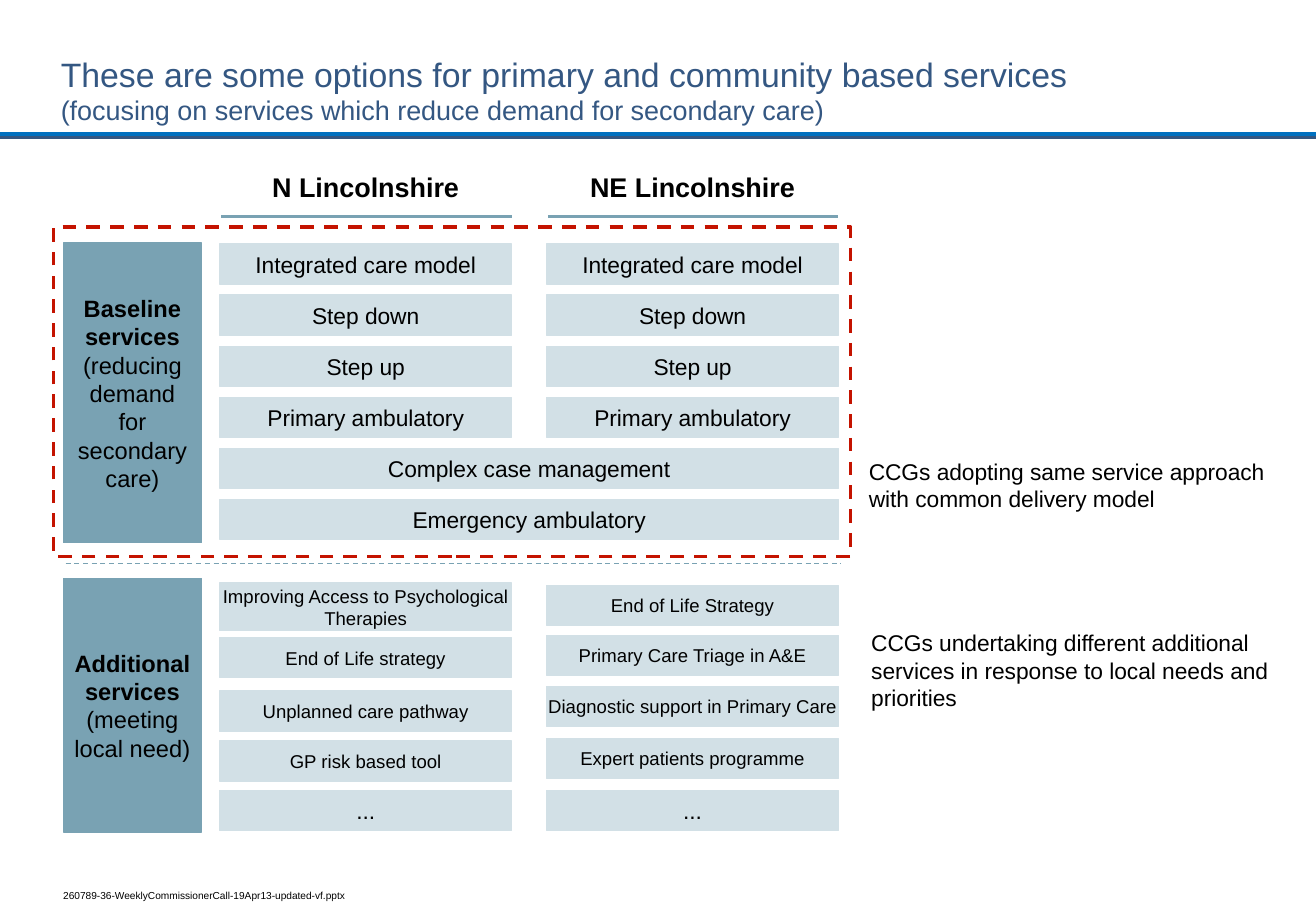
from lxml import etree
from pptx import Presentation
from pptx.dml.color import RGBColor
from pptx.enum import dml, shapes, text
from pptx.oxml import ns
from pptx.util import Inches, Pt

NAVY = RGBColor(0x34, 0x57, 0x82)
BLUE = RGBColor(0x00, 0x70, 0xC0)
TEAL = RGBColor(0x79, 0xA2, 0xB3)
PALE = RGBColor(0xD2, 0xE0, 0xE6)
RED = RGBColor(0xC4, 0x13, 0x00)
BLACK = RGBColor(0x00, 0x00, 0x00)

CENTER = text.PP_ALIGN.CENTER
LEFT = text.PP_ALIGN.LEFT
TOP = text.MSO_ANCHOR.TOP
MIDDLE = text.MSO_ANCHOR.MIDDLE
BOTTOM = text.MSO_ANCHOR.BOTTOM

SLIDE_WIDTH, SLIDE_HEIGHT = 10.83, 7.5
BAR_HEIGHT = 0.33
COLUMN_WIDTH = 2.4
COLUMN_OFFSETS = (0, 2.69)
REGIONS = ("N Lincolnshire", "NE Lincolnshire")

BASELINE_PITCH = 0.42
SEPARATE_SERVICES = ("Integrated care model", "Step down", "Step up", "Primary ambulatory")
SHARED_SERVICES = ("Complex case management", "Emergency ambulatory")

# Each service: label, offset from the top of the block, bar height, text size
ADDITIONAL_SERVICES = (
    (("Improving Access to Psychological Therapies", 0.04, 0.39, 11),
     ("End of Life strategy", 0.49, BAR_HEIGHT, 11),
     ("Unplanned care pathway", 0.93, BAR_HEIGHT, 11),
     ("GP risk based tool", 1.34, BAR_HEIGHT, 11),
     ("...", 1.75, BAR_HEIGHT, 13.5)),
    (("End of Life Strategy", 0.06, BAR_HEIGHT, 11),
     ("Primary Care Triage in A&E", 0.47, BAR_HEIGHT, 11),
     ("Diagnostic support in Primary Care", 0.89, BAR_HEIGHT, 11),
     ("Expert patients programme", 1.32, BAR_HEIGHT, 11),
     ("...", 1.75, BAR_HEIGHT, 13.5)),
)


def write(shape, paragraphs, align=LEFT, anchor=TOP, margins=(0, 0.05), wrap=True):
    """Each paragraph is a list of (words, size, bold, colour) runs, one run a line."""
    frame = shape.text_frame
    side, end = (Inches(margin) for margin in margins)
    settings = {"word_wrap": wrap, "vertical_anchor": anchor,
                "margin_left": side, "margin_right": side,
                "margin_top": end, "margin_bottom": end}
    for name, value in settings.items():
        setattr(frame, name, value)
    for index, runs in enumerate(paragraphs):
        paragraph = frame.add_paragraph() if index else frame.paragraphs[0]
        paragraph.alignment = align
        for position, (words, size, bold, colour) in enumerate(runs):
            if position:
                paragraph.add_line_break()
            run = paragraph.add_run()
            run.text = words
            for name, value in {"name": "Arial", "size": Pt(size), "bold": bold}.items():
                setattr(run.font, name, value)
            run.font.color.rgb = colour


def add_text(slide, box, paragraphs, **layout):
    shape = slide.shapes.add_textbox(*map(Inches, box))
    write(shape, paragraphs, **layout)


def add_box(slide, box, fill, line, width=0.75):
    shape = slide.shapes.add_shape(shapes.MSO_SHAPE.RECTANGLE, *map(Inches, box))
    shape.shadow.inherit = False
    if fill is None:
        shape.fill.background()
    else:
        shape.fill.solid()
        shape.fill.fore_color.rgb = fill
    shape.line.color.rgb = line
    shape.line.width = Pt(width)
    return shape


def add_rule(slide, left, right, y, colour, width, dash=None):
    rule = slide.shapes.add_connector(
        shapes.MSO_CONNECTOR.STRAIGHT, Inches(left), Inches(y), Inches(right), Inches(y))
    rule.line.color.rgb = colour
    rule.line.width = Pt(width)
    rule.line.dash_style = dash
    etree.SubElement(rule._element.spPr, ns.qn("a:effectLst"))


def add_bar(slide, box, label, size=13.5):
    bar = add_box(slide, box, PALE, PALE)
    write(bar, [[(label, size, False, BLACK)]], CENTER, MIDDLE, (0, 0))


def add_side_label(slide, box, heading, detail):
    label = add_box(slide, box, TEAL, TEAL)
    write(label, [[(heading, 14, True, BLACK)], [(detail, 14, False, BLACK)]],
          CENTER, MIDDLE, (0.08, 0.1))


def add_title(slide, box):
    left, top, width, height = box
    add_rule(slide, 0, SLIDE_WIDTH, top + height + 0.04, NAVY, 2.25)
    add_rule(slide, 0, SLIDE_WIDTH, top + height + 0.01, BLUE, 2.25)
    add_text(slide, box, [[
        ("These are some options for primary and community based services", 20, False, NAVY),
        ("(focusing on services which reduce demand for secondary care)", 16, False, NAVY),
    ]], anchor=BOTTOM)


def add_column_headers(slide, box):
    left, top, width, height = box
    for offset, region in zip(COLUMN_OFFSETS, REGIONS):
        x = left + offset
        add_text(slide, (x, top, COLUMN_WIDTH, height), [[(region, 16, True, BLACK)]],
                 align=CENTER, anchor=BOTTOM, margins=(0.1, 0.1))
        add_rule(slide, x + 0.01, x + COLUMN_WIDTH, top + height + 0.01, TEAL, 2)


def add_baseline(slide, box):
    left, top, width, height = box
    add_side_label(slide, (left + 0.08, top + 0.13, 1.14, 2.47),
                   "Baseline services", "(reducing demand for secondary care)")
    bars_left, bars_top = left + 1.37, top + 0.14
    for row, label in enumerate(SEPARATE_SERVICES + SHARED_SERVICES):
        y = bars_top + row * BASELINE_PITCH
        if label in SHARED_SERVICES:
            full_width = COLUMN_OFFSETS[-1] + COLUMN_WIDTH
            add_bar(slide, (bars_left, y, full_width, BAR_HEIGHT), label)
        else:
            for offset in COLUMN_OFFSETS:
                add_bar(slide, (bars_left + offset, y, COLUMN_WIDTH, BAR_HEIGHT), label)
    # Dashed frame around the common services
    frame = add_box(slide, box, None, RED, 2)
    frame.line.dash_style = dml.MSO_LINE.DASH


def add_additional(slide, box):
    left, top, width, height = box
    add_rule(slide, left + 0.02, left + width, top - 0.12, TEAL, 0.75, dml.MSO_LINE.DASH)
    add_side_label(slide, (left, top, 1.14, height),
                   "Additional services", "(meeting local need)")
    for column_offset, services in zip(COLUMN_OFFSETS, ADDITIONAL_SERVICES):
        x = left + 1.29 + column_offset
        for label, offset, bar_height, size in services:
            add_bar(slide, (x, top + offset, COLUMN_WIDTH, bar_height), label, size)


def add_comments(slide, box):
    left, top, width, height = box
    comments = (
        (0, 0, 3.3, "CCGs adopting same service approach with common delivery model"),
        (0.02, 1.41, 3.27, "CCGs undertaking different additional services in response "
                           "to local needs and priorities"),
    )
    for x, y, comment_width, words in comments:
        add_text(slide, (left + x, top + y, comment_width, 0.78),
                 [[(words, 13.5, False, BLACK)]])


def add_footer(slide, box):
    add_text(slide, box,
             [[("260789-36-WeeklyCommissionerCall-19Apr13-updated-vf.pptx", 6, False, BLACK)]],
             anchor=MIDDLE, margins=(0, 0), wrap=False)


def main():
    presentation = Presentation()
    presentation.slide_width = Inches(SLIDE_WIDTH)
    presentation.slide_height = Inches(SLIDE_HEIGHT)
    slide = presentation.slides.add_slide(presentation.slide_layouts[6])
    add_title(slide, (0.5, 0.18, 8.42, 0.91))
    add_column_headers(slide, (1.81, 1.31, 5.09, 0.46))
    add_baseline(slide, (0.44, 1.87, 6.56, 2.71))
    add_additional(slide, (0.52, 4.76, 6.4, 2.09))
    add_comments(slide, (7.15, 3.72, 3.3, 2.2))
    add_footer(slide, (0.52, 7.32, 2.36, 0.1))
    presentation.save("out.pptx")


if __name__ == "__main__":
    main()
